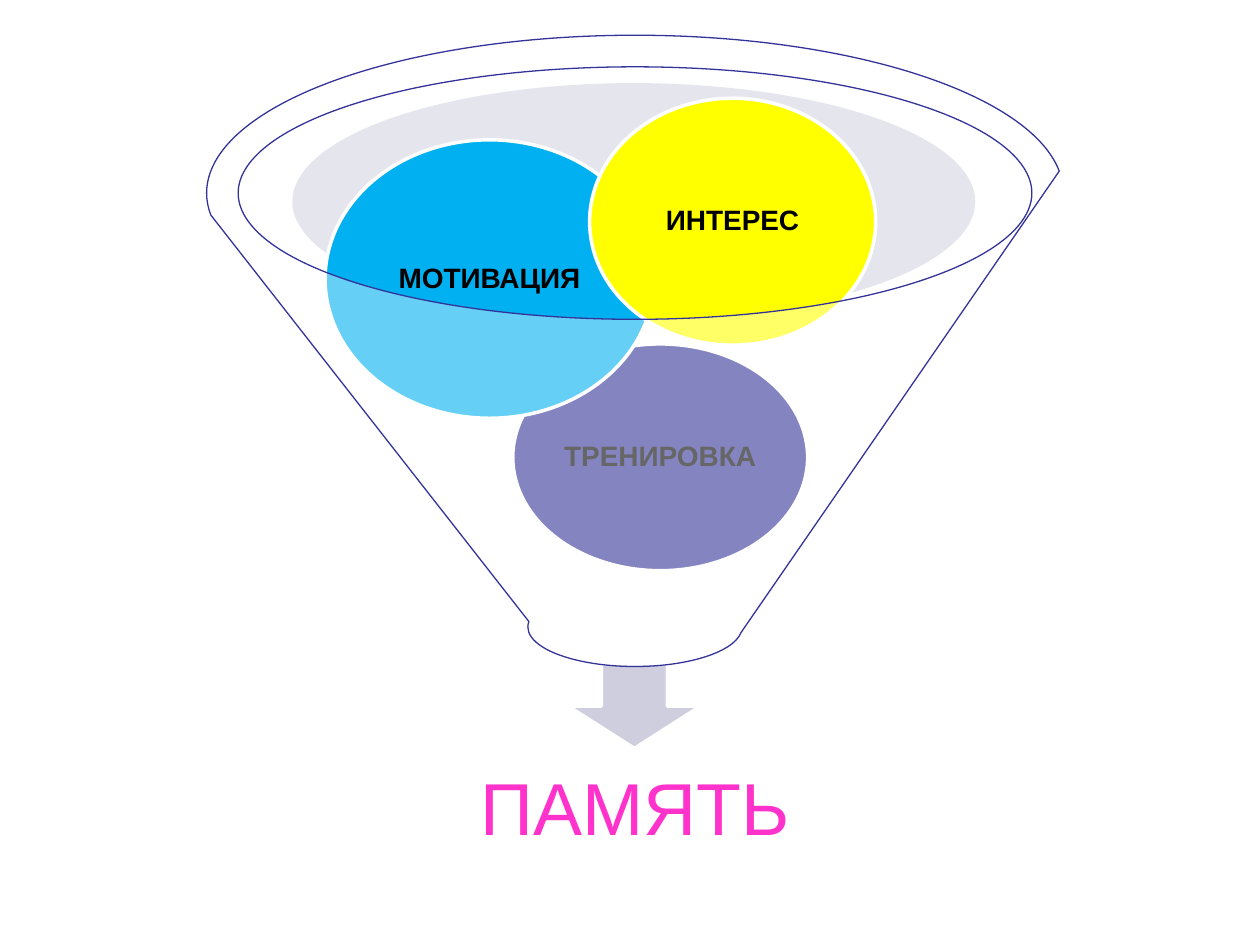
from dataclasses import dataclass

from lxml import etree
from pptx import Presentation
from pptx.dml.color import RGBColor
from pptx.enum.shapes import MSO_SHAPE
from pptx.enum.text import MSO_ANCHOR, PP_ALIGN
from pptx.oxml.ns import qn
from pptx.util import Inches, Pt

ELLIPSE, ARROW, FUNNEL = MSO_SHAPE.OVAL, MSO_SHAPE.DOWN_ARROW, MSO_SHAPE.FUNNEL
MIDDLE, CENTER = MSO_ANCHOR.MIDDLE, PP_ALIGN.CENTER
BLANK_LAYOUT = 6


@dataclass(frozen=True)
class Theme:
    font: str = "Arial"
    label_size: int = 16
    result_size: int = 42
    text: str = "000000"
    white: str = "FFFFFF"
    outline: str = "333399"
    mouth: str = "BFBFD4"
    arrow: str = "CECEDE"
    result: str = "FF33CC"
    training: str = "333399"
    motivation: str = "00B0F0"
    interest: str = "FFFF00"


class FunnelSlide:
    def __init__(self, prs, theme):
        self.theme = theme
        self.s = prs.slides.add_slide(prs.slide_layouts[BLANK_LAYOUT])

    def shape(self, kind, box, fill, line=None, width=2, opacity=None):
        """Add a filled preset shape; opacity is in percent."""
        sp = self.s.shapes.add_shape(kind, *map(Inches, box))
        sp.shadow.inherit = False
        sp.fill.solid()
        sp.fill.fore_color.rgb = RGBColor.from_string(fill)
        if opacity is not None:
            color = sp.element.spPr.find(qn("a:solidFill"))[0]
            etree.SubElement(color, qn("a:alpha"), val=str(opacity * 1000))
        if line:
            sp.line.color.rgb = RGBColor.from_string(line)
            sp.line.width = Pt(width)
        else:
            sp.line.fill.background()
        return sp

    def label(self, sp, text, size, color, inset, bold=False):
        """Put one centred line of text into a shape or text box."""
        tf = sp.text_frame
        frame = {"word_wrap": True, "vertical_anchor": MIDDLE}
        for side in ("left", "right", "top", "bottom"):
            frame[f"margin_{side}"] = Inches(inset)
        for name, value in frame.items():
            setattr(tf, name, value)
        p = tf.paragraphs[0]
        p.alignment = CENTER
        p.line_spacing = 0.9
        r = p.add_run()
        r.text = text
        for name, value in {"name": self.theme.font, "size": Pt(size), "bold": bold}.items():
            setattr(r.font, name, value)
        r.font.color.rgb = RGBColor.from_string(color)

    def ball(self, text, box, fill):
        sp = self.shape(ELLIPSE, box, fill, self.theme.white)
        self.label(sp, text, self.theme.label_size, self.theme.text, 0.02, bold=True)

    def caption(self, text, box):
        sp = self.s.shapes.add_textbox(*map(Inches, box))
        self.label(sp, text, self.theme.result_size, self.theme.result, 0.33)


def main():
    prs = Presentation()
    prs.slide_width, prs.slide_height = Inches(10), Inches(7.5)
    theme = Theme()
    slide = FunnelSlide(prs, theme)

    # Funnel mouth, outlet arrow and result
    slide.shape(ELLIPSE, (2.32, 0.66, 5.42, 1.88), theme.mouth, opacity=40)
    slide.shape(ARROW, (4.51, 5.27, 1.05, 0.67), theme.arrow, theme.white)
    slide.caption("ПАМЯТЬ", (2.52, 5.81, 5.04, 1.26))

    # Ingredients, from back to front
    for text, box, fill in (
        ("ТРЕНИРОВКА", (4.07, 2.73, 2.34, 1.8), theme.training),
        ("МОТИВАЦИЯ", (2.58, 1.11, 2.61, 2.21), theme.motivation),
        ("ИНТЕРЕС", (4.68, 0.78, 2.27, 1.96), theme.interest),
    ):
        slide.ball(text, box, fill)

    # Translucent funnel over the ingredients
    slide.shape(FUNNEL, (1.64, 0.28, 6.8, 5.01), theme.white, theme.outline, 0.75, opacity=40)

    prs.save("out.pptx")


if __name__ == "__main__":
    main()
